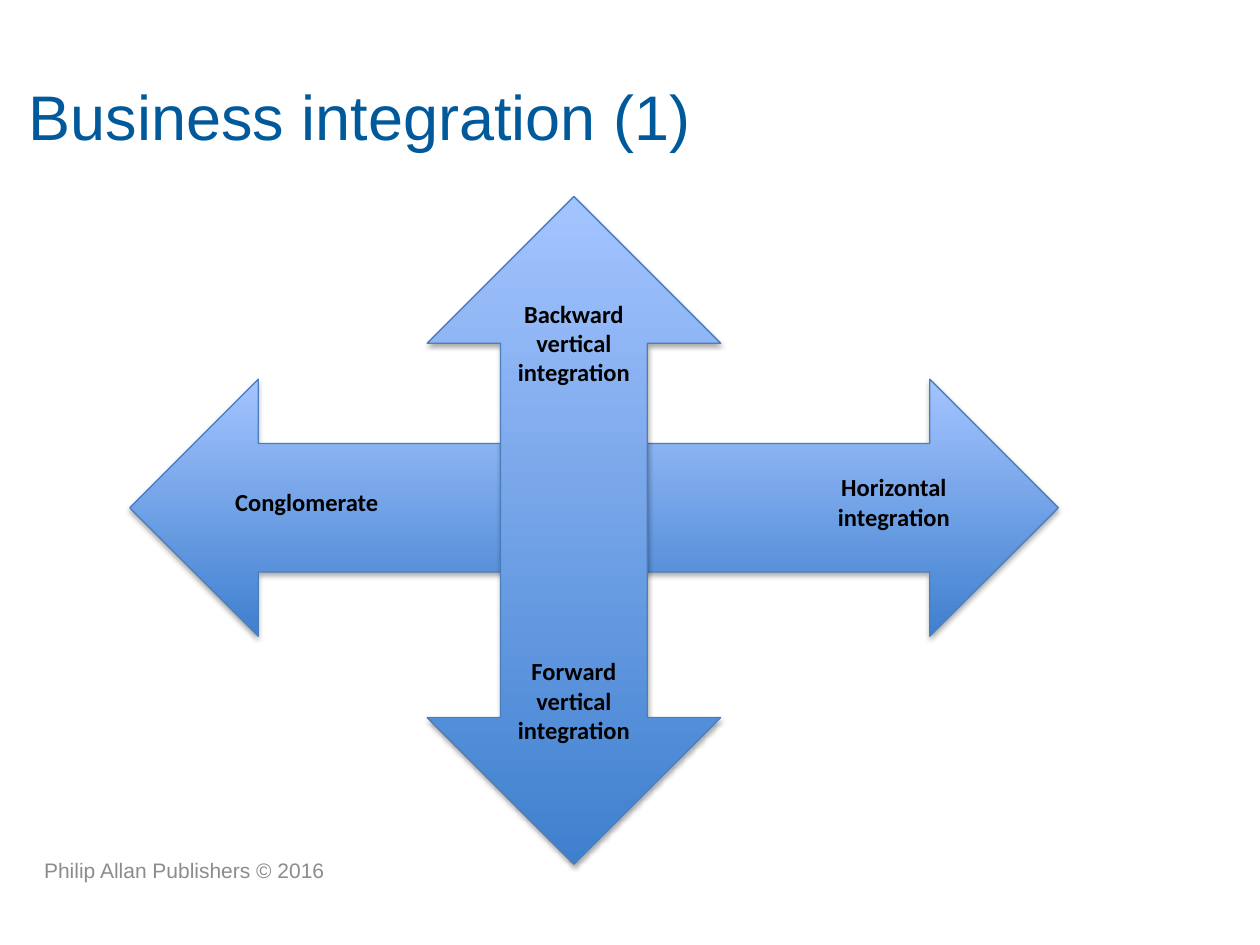
import pptx
import pptx.dml.color
import pptx.enum.shapes
import pptx.enum.text
import pptx.oxml
import pptx.oxml.ns
import pptx.util
from pptx.util import Inches

SHAPE = pptx.enum.shapes.MSO_SHAPE
ALIGN = pptx.enum.text.PP_ALIGN
ANCHOR = pptx.enum.text.MSO_ANCHOR

COLORS = {
    "title": "00599A",
    "label": "000000",
    "footer": "8C8C8C",
    "arrow_bottom": "3F80CE",
    "arrow_top": "A4C4FF",
    "arrow_line": "4B7EBC",
    "shadow": "000000",
}


def rgb(name):
    return pptx.dml.color.RGBColor.from_string(COLORS[name])


def add_text(slide, text, x, y, w, h, *, size, color, font="Arial", bold=False,
             align=ALIGN.LEFT, anchor=ANCHOR.MIDDLE, inset=(0, 0)):
    """Add a text box with one paragraph per line of text."""
    box = slide.shapes.add_textbox(Inches(x), Inches(y), Inches(w), Inches(h))
    tf = box.text_frame
    tf.word_wrap = True
    tf.vertical_anchor = anchor
    tf.margin_left = tf.margin_right = Inches(inset[0])
    tf.margin_top = tf.margin_bottom = Inches(inset[1])
    for i, line in enumerate(text.split("\n")):
        p = tf.paragraphs[0] if i == 0 else tf.add_paragraph()
        p.alignment = align
        r = p.add_run()
        r.text = line
        r.font.name = font
        r.font.size = pptx.util.Pt(size)
        r.font.bold = bold
        r.font.color.rgb = rgb(color)


def add_soft_shadow(sp):
    sp.shadow.inherit = False
    effects = sp._element.spPr.find(pptx.oxml.ns.qn("a:effectLst"))
    effects.append(pptx.oxml.parse_xml(
        f'<a:outerShdw {pptx.oxml.ns.nsdecls("a")} blurRad="{pptx.util.Pt(3.1)}" '
        f'dist="{pptx.util.Pt(1.8)}" dir="5400000" rotWithShape="0">'
        f'<a:srgbClr val="{COLORS["shadow"]}"><a:alpha val="35000"/></a:srgbClr>'
        '</a:outerShdw>'))


def add_arrow(slide, kind, x, y, w, h):
    sp = slide.shapes.add_shape(kind, Inches(x), Inches(y), Inches(w), Inches(h))
    sp.fill.gradient()
    sp.fill.gradient_angle = 90
    for stop, name in zip(sp.fill.gradient_stops, ("arrow_bottom", "arrow_top")):
        stop.color.rgb = rgb(name)
    sp.line.color.rgb = rgb("arrow_line")
    sp.line.width = pptx.util.Pt(0.75)
    add_soft_shadow(sp)


def add_integration_cross(slide, x, y, w, h):
    """Draw the crossed double arrows and name their four directions."""
    add_arrow(slide, SHAPE.LEFT_RIGHT_ARROW, x, y + 1.45, w, 2.04)
    add_arrow(slide, SHAPE.UP_DOWN_ARROW, x + 2.36, y, 2.33, h)
    labels = [
        ("Backward\nvertical\nintegration", 2.9, 0.76, 1.25, 0.81),
        ("Forward\nvertical\nintegration", 2.9, 3.6, 1.25, 0.81),
        ("Conglomerate", 0.72, 2.26, 1.37, 0.34),
        ("Horizontal integration", 5.38, 2.14, 1.37, 0.57),
    ]
    for text, dx, dy, label_w, label_h in labels:
        add_text(slide, text, x + dx, y + dy, label_w, label_h, size=14,
                 color="label", font="Calibri", bold=True, align=ALIGN.CENTER,
                 anchor=ANCHOR.TOP, inset=(0.1, 0.05))


def main():
    prs = pptx.Presentation()
    prs.slide_width, prs.slide_height = Inches(10), Inches(7.5)
    slide = prs.slides.add_slide(prs.slide_layouts[6])
    add_text(slide, "Business integration (1)", 0.23, 0.52, 9.77, 0.79,
             size=36, color="title")
    add_integration_cross(slide, 1.03, 1.56, 7.37, 5.3)
    add_text(slide, "Philip Allan Publishers © 2016", 0.35, 6.6, 3.32, 0.61,
             size=12, color="footer")
    prs.save("out.pptx")


if __name__ == "__main__":
    main()
